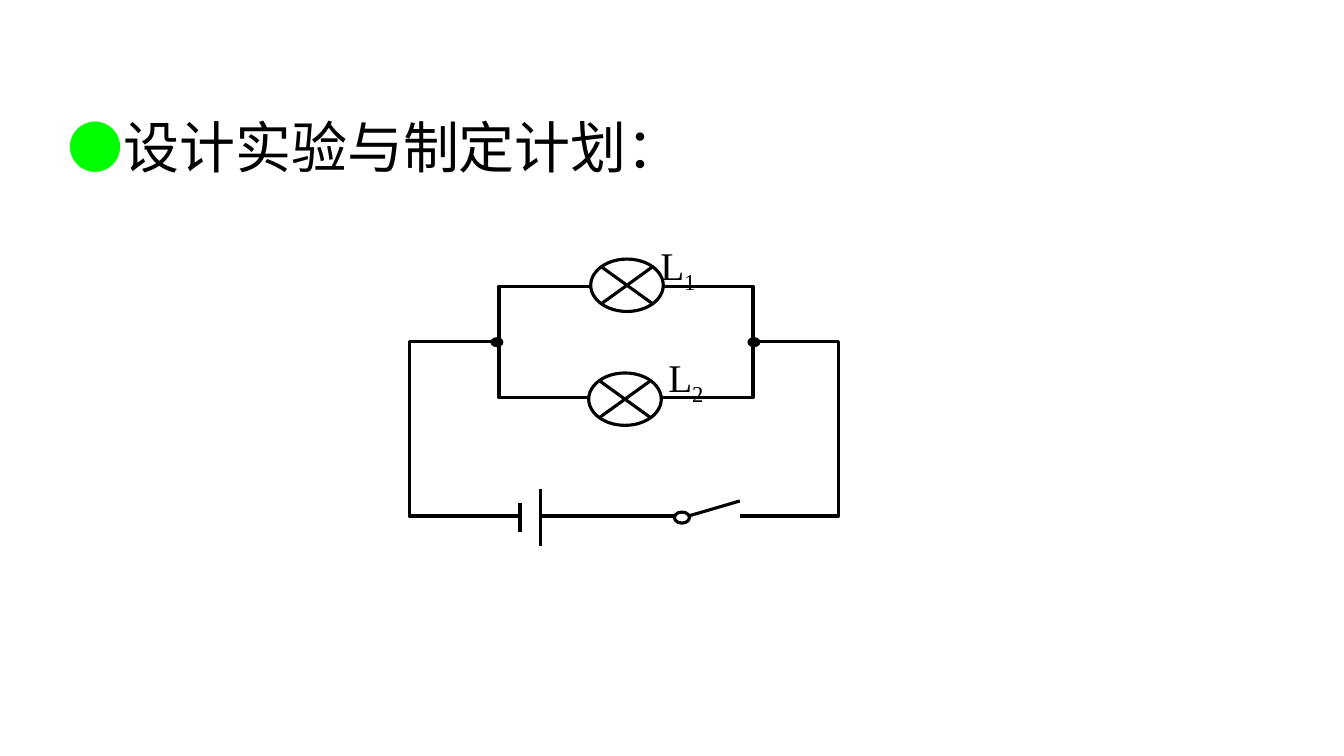
from lxml.etree import SubElement
from pptx import Presentation
from pptx.dml.color import RGBColor
from pptx.enum.shapes import MSO_CONNECTOR, MSO_SHAPE
from pptx.enum.text import MSO_AUTO_SIZE
from pptx.oxml.ns import qn
from pptx.util import Inches, Pt

CELL = Inches(0.1)
COLUMNS, ROWS = 133.33, 75
COLORS = {"ink": "000000", "paper": "FFFFFF", "bullet": "00FF00"}
TITLE_FONT, LABEL_FONT = "Noto Sans CJK SC", "Times New Roman"
WIRE = 2.25


def cells(*counts):
    """Convert grid cells to lengths."""
    return [round(count * CELL) for count in counts]


def color(name):
    """Look up a colour by its role."""
    return RGBColor.from_string(COLORS[name])


def add_part(slide, kind, box, fill="paper", outlined=True):
    """Draw a filled circuit part, with or without a wire outline."""
    part = slide.shapes.add_shape(kind, *cells(*box))
    part.shadow.inherit = False
    part.fill.solid()
    part.fill.fore_color.rgb = color(fill)
    if outlined:
        part.line.color.rgb = color("ink")
        part.line.width = Pt(WIRE)
    else:
        part.line.fill.background()


def add_stroke(slide, start, end, width=WIRE):
    """Draw a straight stroke between two grid points."""
    stroke = slide.shapes.add_connector(MSO_CONNECTOR.STRAIGHT, *cells(*start, *end))
    stroke.line.color.rgb = color("ink")
    stroke.line.width = Pt(width)
    SubElement(stroke._element.spPr, qn("a:effectLst"))


def add_frame(slide, box):
    """Add a wrapping text box and return its text frame."""
    frame = slide.shapes.add_textbox(*cells(*box)).text_frame
    frame.word_wrap = True
    frame.auto_size = MSO_AUTO_SIZE.SHAPE_TO_FIT_TEXT
    return frame


def add_run(paragraph, text, size, font, ink="ink"):
    """Append a styled run and return its properties element."""
    run = paragraph.add_run()
    run.text = text
    run.font.size = Pt(size)
    run.font.color.rgb = color(ink)
    run.font.name = font
    properties = run._r.get_or_add_rPr()
    SubElement(properties, qn("a:ea"), typeface=font)
    return properties


def add_title(slide):
    """Write the heading with its green dot."""
    heading = add_frame(slide, (5.7, 10.7, 116.1, 7.7)).paragraphs[0]
    add_run(heading, "●", 40, TITLE_FONT, "bullet")
    add_run(heading, "设计实验与制定计划：", 40, TITLE_FONT)


def add_label(slide, left, top, number):
    """Write a lamp name with its subscript number."""
    frame = add_frame(slide, (left, top, 7.9, 6.2))
    frame.margin_left = frame.margin_top = frame.margin_right = frame.margin_bottom = 0
    name = frame.paragraphs[0]
    name.line_spacing = 1.5
    before = SubElement(name._p.get_or_add_pPr(), qn("a:spcBef"))
    SubElement(before, qn("a:spcPct"), val="50000")
    add_run(name, "L", 28, LABEL_FONT)
    add_run(name, number, 28, LABEL_FONT).set("baseline", "-25000")


def add_loops(slide):
    """Draw the main loop, the parallel branches and both lamps."""
    add_part(slide, MSO_SHAPE.RECTANGLE, (40.6, 33.9, 42.6, 17.3))
    add_part(slide, MSO_SHAPE.RECTANGLE, (49.5, 28.4, 25.2, 11))
    for left, top in ((58.6, 25.7), (58.4, 37)):
        add_part(slide, MSO_SHAPE.FLOWCHART_SUMMING_JUNCTION, (left, top, 7.2, 5.2))


def add_battery(slide):
    """Break the main loop with a battery cell."""
    add_part(slide, MSO_SHAPE.RECTANGLE, (51.6, 50.4, 2, 1.4), outlined=False)
    add_stroke(slide, (53.6, 48.5), (53.6, 54.2))
    add_stroke(slide, (51.6, 49.9), (51.6, 52.8), 3)


def add_switch(slide):
    """Break the main loop with an open switch."""
    add_part(slide, MSO_SHAPE.RECTANGLE, (67.6, 49.7, 5.8, 2.9), outlined=False)
    add_stroke(slide, (67.6, 51.4), (73.4, 49.7))
    add_part(slide, MSO_SHAPE.OVAL, (66.9, 50.8, 1.5, 1.1))


def main():
    """Build the slide with the parallel circuit."""
    deck = Presentation()
    deck.slide_width, deck.slide_height = cells(COLUMNS, ROWS)
    slide = deck.slides.add_slide(deck.slide_layouts[6])
    add_title(slide)
    add_loops(slide)
    add_battery(slide)
    add_label(slide, 65.5, 21.3, "1")
    add_switch(slide)
    add_label(slide, 66.3, 32.4, "2")
    for junction in (74.15, 48.65):
        add_part(slide, MSO_SHAPE.OVAL, (junction, 33.45, 1.3, 1), "ink", False)
    deck.save("out.pptx")


if __name__ == "__main__":
    main()
